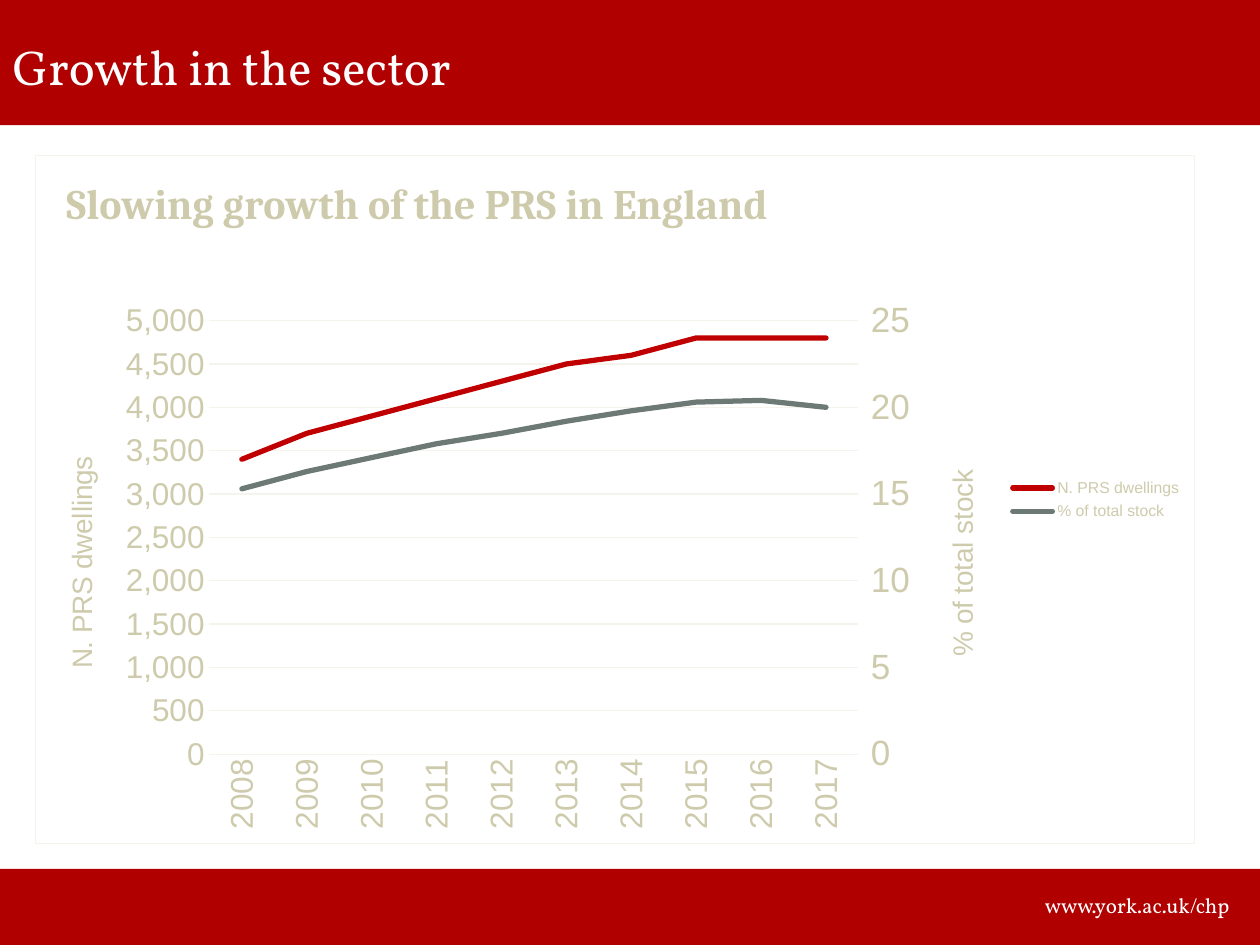
from copy import deepcopy

from pptx import Presentation
from pptx.chart.axis import ValueAxis
from pptx.chart.data import CategoryChartData
from pptx.dml.color import RGBColor
from pptx.enum.chart import XL_CHART_TYPE as ChartType
from pptx.enum.chart import XL_LEGEND_POSITION as LegendPosition
from pptx.enum.chart import XL_TICK_MARK as TickMark
from pptx.enum.shapes import MSO_SHAPE as ShapeType
from pptx.enum.text import MSO_ANCHOR as Anchor
from pptx.enum.text import PP_ALIGN as Align
from pptx.oxml import parse_xml
from pptx.oxml.ns import nsdecls, qn
from pptx.util import Pt

RED = RGBColor(0xB0, 0x00, 0x00)
WHITE = RGBColor(0xFF, 0xFF, 0xFF)
SAND = RGBColor(0xCE, 0xCB, 0xAC)
PALE = RGBColor(0xF4, 0xF3, 0xEC)
LINE_RED = RGBColor(0xC0, 0x00, 0x00)
LINE_GREY = RGBColor(0x6C, 0x79, 0x74)

YEARS = range(2008, 2018)
DWELLINGS = [3400, 3700, 3900, 4100, 4300, 4500, 4600, 4800, 4800, 4800]
SHARES = [15.3, 16.3, 17.1, 17.9, 18.5, 19.2, 19.8, 20.3, 20.4, 20]


def format_font(font, name, size, color, bold=False):
    font.name = name
    font.size = Pt(size)
    font.bold = bold
    font.color.rgb = color


def format_line(line, color, width):
    line.color.rgb = color
    line.width = Pt(width)


def add_band(slide, top, height):
    band = slide.shapes.add_shape(ShapeType.RECTANGLE, 0, Pt(top), Pt(720), Pt(height))
    band.shadow.inherit = False
    band.fill.solid()
    band.fill.fore_color.rgb = RED
    band.line.fill.background()
    return band


def write_text(shape, text, size):
    shape.text_frame.text = text
    shape.text_frame.word_wrap = True
    paragraph = shape.text_frame.paragraphs[0]
    paragraph.alignment = Align.LEFT
    format_font(paragraph.runs[0].font, "Vollkorn", size, WHITE)


def add_title(slide, text, band):
    title = slide.shapes.title
    band.element.addnext(title.element)
    title.left, title.top, title.width, title.height = 0, Pt(9), Pt(502), Pt(57)
    write_text(title, text, 28)
    title.text_frame.vertical_anchor = Anchor.MIDDLE


def add_address(slide, text):
    box = slide.shapes.add_textbox(Pt(590), Pt(506.5), Pt(129), Pt(22))
    write_text(box, text, 12)


def set_layout(element, index, **places):
    for layout in element.findall(qn("c:layout")):
        element.remove(layout)
    target = '<c:layoutTarget val="inner"/>' if "w" in places else ""
    modes = "".join(f'<c:{key}Mode val="edge"/>' for key in "xy")
    values = "".join(f'<c:{key} val="{value}"/>' for key, value in places.items())
    element.insert(index, parse_xml(
        f'<c:layout {nsdecls("c")}><c:manualLayout>{target}{modes}{values}'
        "</c:manualLayout></c:layout>"))


def write_chart_title(title, text, font_name, size, x, y, bold=False):
    title.text_frame.text = text
    run = title.text_frame.paragraphs[0].runs[0]
    format_font(run.font, font_name, size, SAND, bold)
    set_layout(title._element, 1, x=x, y=y)


def rotate_text(element):
    body = element.find(".//" + qn("a:bodyPr"))
    body.set("rot", "-5400000")
    body.set("vert", "horz")


def format_value_axis(axis, title, x, y, label_size, maximum, unit, number_format):
    axis.minimum_scale = 0
    axis.maximum_scale = maximum
    axis.major_unit = unit
    axis.format.line.fill.background()
    format_font(axis.tick_labels.font, "Arial", label_size, SAND)
    axis.tick_labels.number_format = number_format
    axis.tick_labels.number_format_is_linked = False
    write_chart_title(axis.axis_title, title, "Arial", 16, x, y)
    rotate_text(axis.axis_title._element)


def format_category_axis(axis):
    axis.major_tick_mark = TickMark.NONE
    format_line(axis.format.line, PALE, 0.75)
    format_font(axis.tick_labels.font, "Arial", 18, SAND)
    rotate_text(axis._element.find(qn("c:txPr")))


def format_series(series, color):
    series.smooth = False
    format_line(series.format.line, color, 3)
    series._element.find(".//" + qn("a:ln")).set("cap", "rnd")


def add_right_axis(chart):
    plot_area = chart.element.find(".//" + qn("c:plotArea"))
    left_plot = plot_area.find(qn("c:lineChart"))
    category = plot_area.find(qn("c:catAx"))
    value = plot_area.find(qn("c:valAx"))
    right_plot, right_category, right_value = map(deepcopy, (left_plot, category, value))
    left_plot.remove(left_plot.findall(qn("c:ser"))[1])
    right_plot.remove(right_plot.find(qn("c:ser")))
    left_plot.addnext(right_plot)
    value.addnext(right_value)
    right_value.addnext(right_category)
    for identifier, element in zip(("5001", "5002"), right_plot.findall(qn("c:axId"))):
        element.set("val", identifier)
    for axis, own, other in ((right_category, "5001", "5002"), (right_value, "5002", "5001")):
        axis.find(qn("c:axId")).set("val", own)
        axis.find(qn("c:crossAx")).set("val", other)
    right_value.find(qn("c:axPos")).set("val", "r")
    right_value.find(qn("c:crosses")).set("val", "max")
    ValueAxis(right_category).visible = False
    return ValueAxis(right_value)


def format_chart_area(chart):
    chart.element.find(qn("c:chart")).addnext(parse_xml(
        f'<c:spPr {nsdecls("c", "a")}>'
        f'<a:solidFill><a:srgbClr val="{WHITE}"/></a:solidFill>'
        f'<a:ln w="{Pt(0.75)}"><a:solidFill><a:srgbClr val="{PALE}"/></a:solidFill></a:ln>'
        "</c:spPr>"))


def add_growth_chart(slide):
    data = CategoryChartData()
    data.categories = YEARS
    data.add_series("N. PRS dwellings", DWELLINGS, "#,##0")
    data.add_series("% of total stock", SHARES, "General")
    chart = slide.shapes.add_chart(
        ChartType.LINE, Pt(20), Pt(88.5), Pt(663), Pt(394), data).chart
    format_font(chart.font, "Arial", 10, SAND)
    format_chart_area(chart)
    write_chart_title(chart.chart_title, "Slowing growth of the PRS in England",
                      "Cambria", 24, 0.02, 0.02, True)
    chart.plots[0].vary_by_categories = False
    for series, color in zip(chart.plots[0].series, (LINE_RED, LINE_GREY)):
        format_series(series, color)

    format_category_axis(chart.category_axis)
    left_axis = chart.value_axis
    right_axis = add_right_axis(chart)
    left_axis.major_tick_mark = TickMark.NONE
    format_line(left_axis.major_gridlines.format.line, PALE, 0.75)
    format_value_axis(left_axis, "N. PRS dwellings", 0.02, 0.43, 18, 5000, 500, "#,##0")
    right_axis.has_major_gridlines = False
    right_axis.major_tick_mark = TickMark.OUTSIDE
    format_value_axis(right_axis, "% of total stock", 0.78, 0.45, 20, 25, 5, "General")
    set_layout(chart.element.find(".//" + qn("c:plotArea")), 0,
               x=0.15, y=0.24, w=0.56, h=0.63)

    chart.has_legend = True
    chart.legend.position = LegendPosition.RIGHT
    chart.legend.include_in_layout = False
    format_font(chart.legend.font, "Arial", 9, SAND)


def main():
    presentation = Presentation()
    presentation.slide_width = Pt(720)
    presentation.slide_height = Pt(540)
    slide = presentation.slides.add_slide(presentation.slide_layouts[5])
    header = add_band(slide, 0, 71.5)
    add_band(slide, 496.5, 43.5)
    add_title(slide, "Growth in the sector", header)
    add_address(slide, "www.york.ac.uk/chp")
    add_growth_chart(slide)
    presentation.save("out.pptx")


if __name__ == "__main__":
    main()
